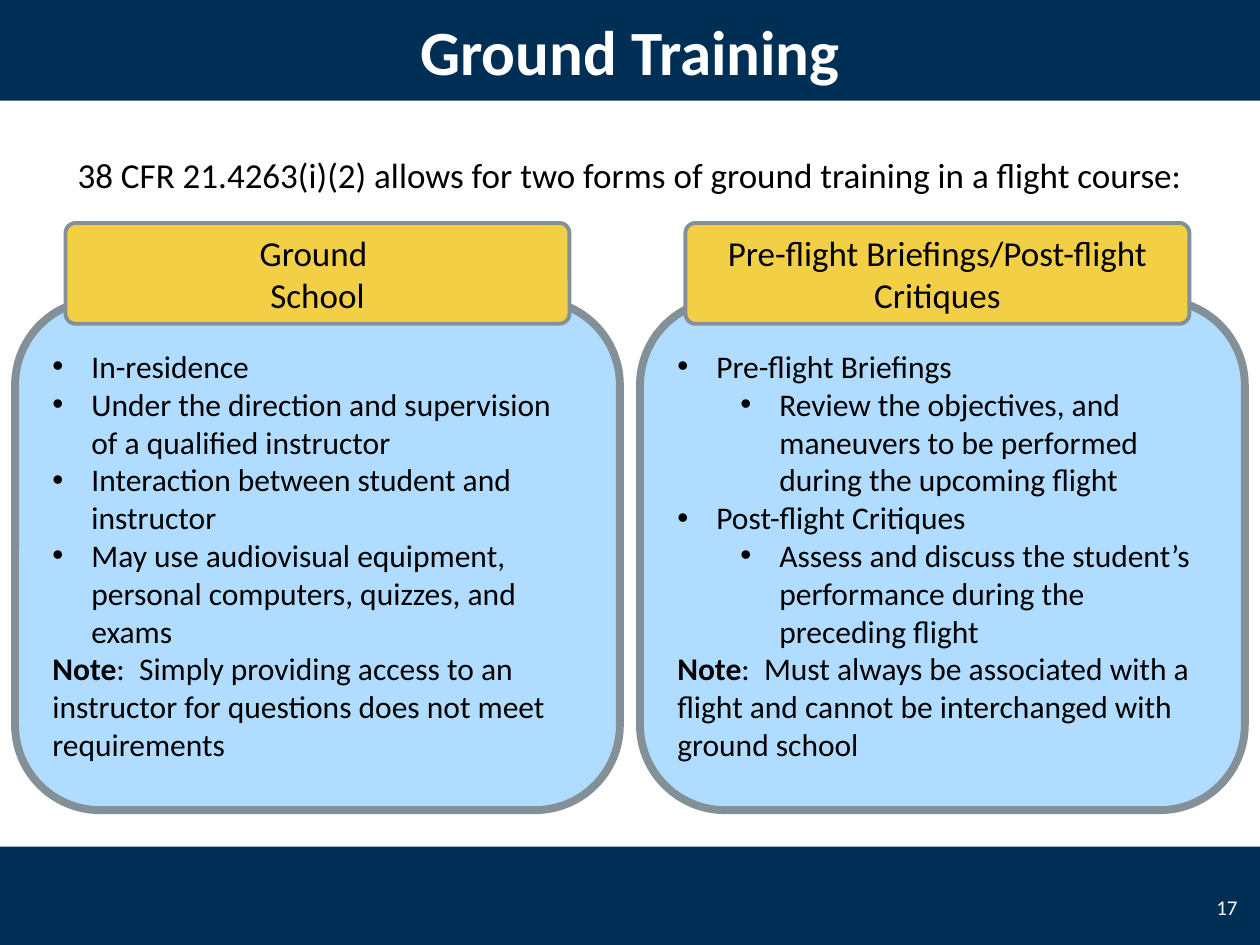
from dataclasses import dataclass

from lxml.etree import SubElement
from pptx import Presentation
from pptx.dml.color import RGBColor
from pptx.enum.shapes import MSO_SHAPE as Shape
from pptx.enum.text import MSO_ANCHOR as Anchor, PP_ALIGN as Align
from pptx.oxml.ns import qn
from pptx.util import Inches, Pt

TITLE = "Ground Training"
INTRO = "38 CFR 21.4263(i)(2) allows for two forms of ground training in a flight course:"
PAGE_NUMBER = "17"
PANELS = [
    {
        "heading": ["Ground ", "School"],
        "bullets": [
            (0, "In-residence"),
            (0, "Under the direction and supervision of a qualified instructor"),
            (0, "Interaction between student and instructor"),
            (0, "May use audiovisual equipment, personal computers, quizzes, and exams"),
        ],
        "note": ":  Simply providing access to an instructor for questions does not meet requirements",
    },
    {
        "heading": ["Pre-flight Briefings/Post-flight Critiques"],
        "bullets": [
            (0, "Pre-flight Briefings"),
            (1, "Review the objectives, and maneuvers to be performed during the upcoming flight"),
            (0, "Post-flight Critiques"),
            (1, "Assess and discuss the student’s performance during the preceding flight"),
        ],
        "note": ":  Must always be associated with a flight and cannot be interchanged with ground school",
    },
]


@dataclass(frozen=True)
class Theme:
    font: str = "Calibri"
    navy: str = "002F56"
    panel: str = "B0DCFF"
    heading: str = "F3CF45"
    border: str = "839097"
    dark: str = "000000"
    light: str = "FFFFFF"
    title_size: int = 36
    heading_size: int = 20
    body_size: int = 18
    number_size: int = 12


THEME = Theme()
SLIDE_WIDTH, SLIDE_HEIGHT = 10, 7.5
BAND_HEIGHT = 0.8
FOOTER_TOP = 6.72
PANEL_LEFT, PANEL_TOP, PANEL_WIDTH, PANEL_HEIGHT = 0.12, 2.38, 4.8, 4.05
HEADING_LEFT, HEADING_TOP, HEADING_WIDTH, HEADING_HEIGHT = 0.52, 1.77, 4, 0.8
PANEL_STEP = SLIDE_WIDTH - 2 * PANEL_LEFT - PANEL_WIDTH
HEADING_STEP = 4.92
INDENT, LEVEL_STEP = 0.31, 0.5


def add_box(slide, kind, box, fill, line=None, line_width=0):
    shape = slide.shapes.add_shape(kind, *map(Inches, box))
    shape.shadow.inherit = False
    shape.fill.solid()
    shape.fill.fore_color.rgb = RGBColor.from_string(fill)
    if line:
        shape.line.color.rgb = RGBColor.from_string(line)
        shape.line.width = Pt(line_width)
    else:
        shape.line.fill.background()
    return shape


def add_text_box(slide, box):
    return slide.shapes.add_textbox(*map(Inches, box))


def style(paragraph, size, color, align, bold=None):
    paragraph.alignment = align
    font = paragraph.font
    font.name, font.size, font.bold = THEME.font, Pt(size), bold
    font.color.rgb = RGBColor.from_string(color)


def next_paragraph(frame, index):
    return frame.add_paragraph() if index else frame.paragraphs[0]


def write(shape, lines, size, color, align, bold=None):
    frame = shape.text_frame
    frame.word_wrap = True
    frame.vertical_anchor = Anchor.MIDDLE
    for index, line in enumerate(lines):
        paragraph = next_paragraph(frame, index)
        paragraph.text = line
        style(paragraph, size, color, align, bold)


def add_bullet(paragraph, level):
    paragraph.level = level
    properties = paragraph._p.get_or_add_pPr()
    properties.set("marL", str(Inches(INDENT + level * LEVEL_STEP)))
    properties.set("indent", str(-Inches(INDENT)))
    SubElement(properties, qn("a:buFont"), typeface="Arial")
    SubElement(properties, qn("a:buChar"), char="•")


def write_panel(shape, bullets, note):
    frame = shape.text_frame
    frame.word_wrap = True
    frame.vertical_anchor = Anchor.MIDDLE
    for index, (level, text) in enumerate(bullets):
        paragraph = next_paragraph(frame, index)
        paragraph.text = text
        add_bullet(paragraph, level)
        style(paragraph, THEME.body_size, THEME.dark, Align.LEFT)
    paragraph = frame.add_paragraph()
    label = paragraph.add_run()
    label.text = "Note"
    label.font.bold = True
    paragraph.add_run().text = note
    style(paragraph, THEME.body_size, THEME.dark, Align.LEFT)


def add_title(slide):
    title = slide.shapes.title
    title.left, title.top, title.width, title.height = map(Inches, (0.5, 0, 9, BAND_HEIGHT))
    write(title, [TITLE], THEME.title_size, THEME.light, Align.CENTER, bold=True)
    title.element.getparent().append(title.element)


def main():
    presentation = Presentation()
    presentation.slide_width = Inches(SLIDE_WIDTH)
    presentation.slide_height = Inches(SLIDE_HEIGHT)
    slide = presentation.slides.add_slide(presentation.slide_layouts[5])

    for top, height in ((FOOTER_TOP, SLIDE_HEIGHT - FOOTER_TOP), (0, BAND_HEIGHT)):
        add_box(slide, Shape.RECTANGLE, (0, top, SLIDE_WIDTH, height), THEME.navy)
    number = add_text_box(slide, (9.5, 7, 0.42, 0.4))
    write(number, [PAGE_NUMBER], THEME.number_size, THEME.light, Align.RIGHT)
    add_title(slide)

    for index, content in enumerate(PANELS):
        panel_box = (PANEL_LEFT + index * PANEL_STEP, PANEL_TOP, PANEL_WIDTH, PANEL_HEIGHT)
        panel = add_box(slide, Shape.ROUNDED_RECTANGLE, panel_box, THEME.panel, THEME.border, 4.5)
        write_panel(panel, content["bullets"], content["note"])

        heading_box = (HEADING_LEFT + index * HEADING_STEP, HEADING_TOP, HEADING_WIDTH, HEADING_HEIGHT)
        heading = add_box(slide, Shape.ROUNDED_RECTANGLE, heading_box, THEME.heading, THEME.border, 2.25)
        heading.adjustments[0] = 0.1
        write(heading, content["heading"], THEME.heading_size, THEME.dark, Align.CENTER)

    intro = add_text_box(slide, (0, 0.97, SLIDE_WIDTH, 0.83))
    write(intro, [INTRO], THEME.heading_size, THEME.dark, Align.CENTER)

    presentation.save("out.pptx")


if __name__ == "__main__":
    main()
